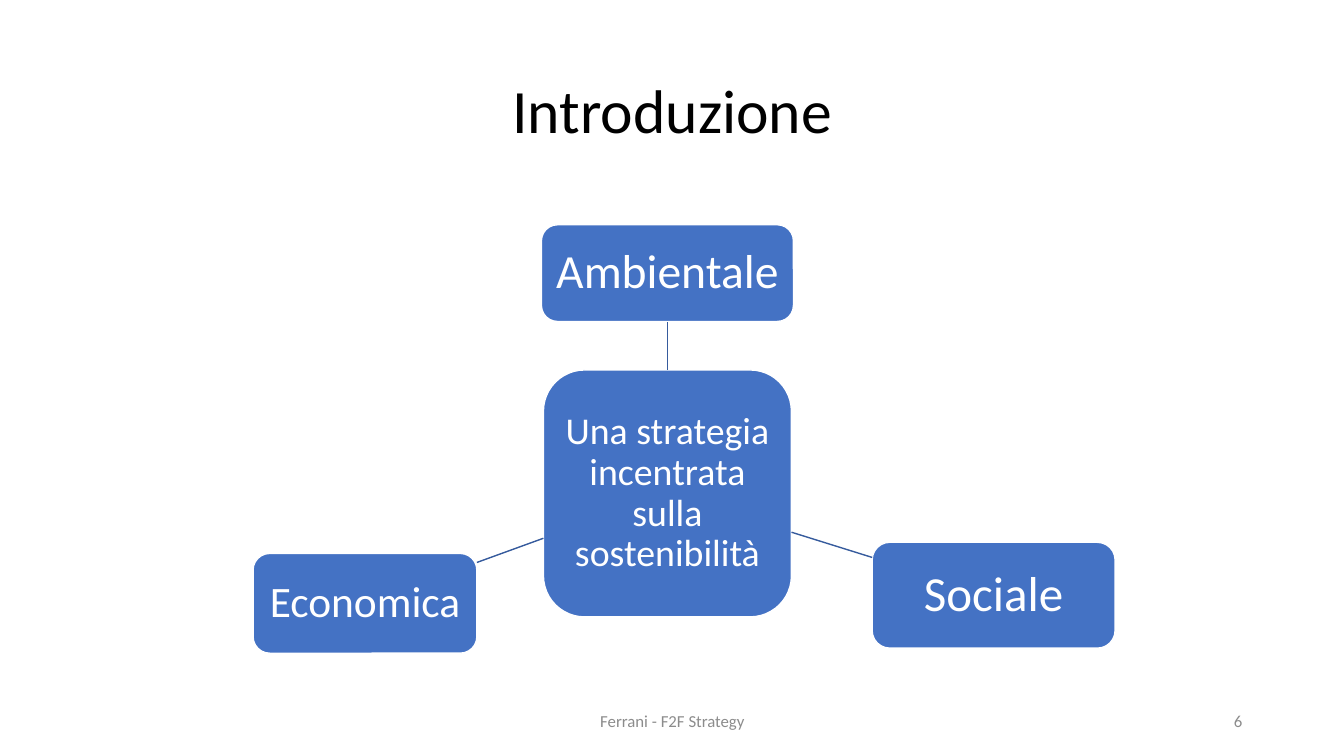
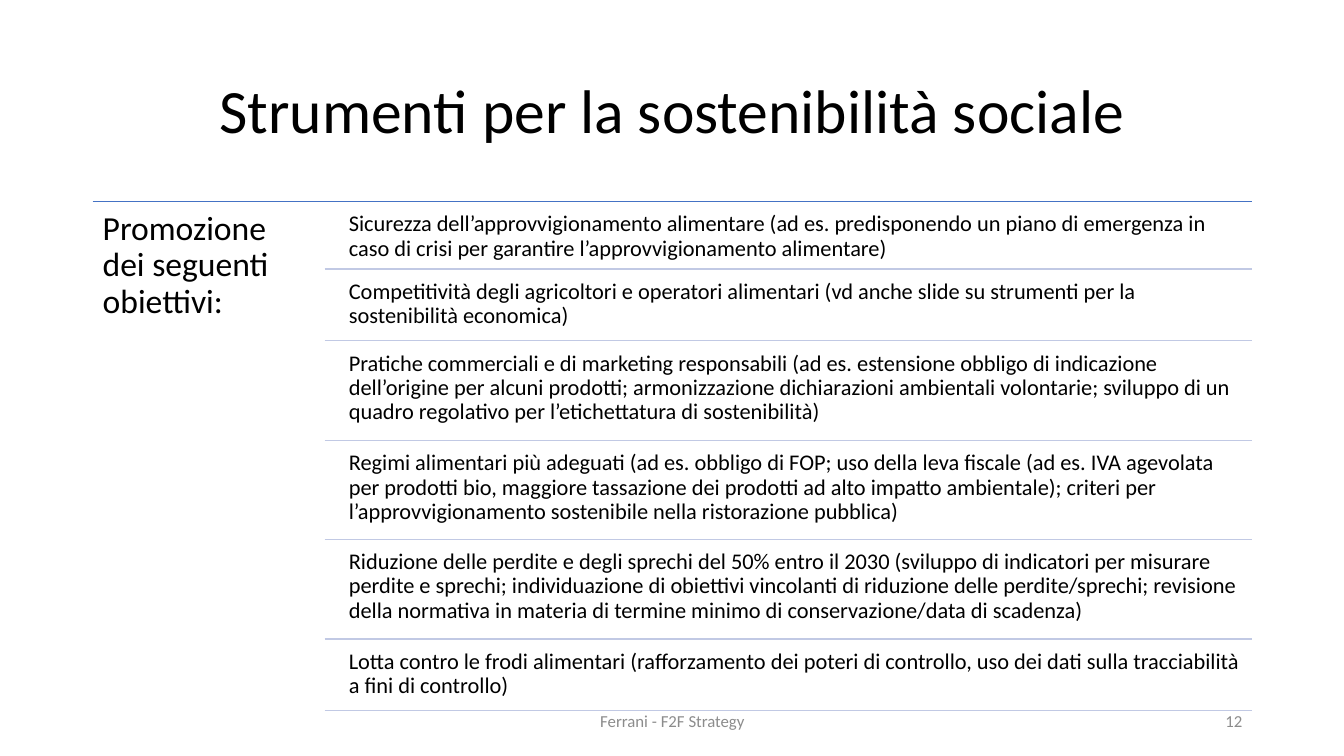
from dataclasses import dataclass

from lxml import etree
from pptx import Presentation
from pptx import util as u
from pptx.dml.color import RGBColor
from pptx.enum import shapes, text
from pptx.oxml.ns import qn

PX = 9144  # EMU; 100 px to the inch


@dataclass(frozen=True)
class Theme:
    font: str = "Calibri"
    ink: str = "000000"
    paper: str = "FFFFFF"
    accent: str = "4472C4"
    link: str = "365B9D"
    divider: str = "C1C9E4"
    muted: str = "8C8C8C"
    title_size: int = 44
    lead_size: int = 24
    row_size: int = 16
    footer_size: int = 12
    line_width: int = 1
    spacing: float = 0.9


THEME = Theme()
FOOTER = "Ferrani - F2F Strategy"
TITLE_BOX = (92, 40, 1150, 145)
FOOTER_BOX = (442, 695, 450, 40)
NUMBER_BOX = (942, 695, 300, 40)

HUB = ("Una strategia incentrata sulla sostenibilità", (539, 367, 246, 245), 27)
TOP_PILLAR = ("Ambientale", (537, 223, 250, 96), 34)
# label, box, type size, link start, link end
SIDE_PILLARS = [
    ("Sociale", (865, 538, 241, 105), 35, (785, 528), (865, 553)),
    ("Economica", (251, 549, 222, 99), 31, (539, 534), (473, 558)),
]

LEFT, RIGHT, LIST_TOP = 92, 1242, 200
DIVIDER_LEFT, ROW_LEFT, ROW_GAP = 322, 339, 4
GOALS = [
    (67, "Sicurezza dell’approvvigionamento alimentare (ad es. predisponendo un piano di "
         "emergenza in caso di crisi per garantire l’approvvigionamento alimentare)"),
    (71, "Competitività degli agricoltori e operatori alimentari (vd anche slide su "
         "strumenti per la sostenibilità economica)"),
    (99, "Pratiche commerciali e di marketing responsabili (ad es. estensione obbligo di "
         "indicazione dell’origine per alcuni prodotti; armonizzazione dichiarazioni "
         "ambientali volontarie; sviluppo di un quadro regolativo per l’etichettatura di "
         "sostenibilità)"),
    (98, "Regimi alimentari più adeguati (ad es. obbligo di FOP; uso della leva fiscale "
         "(ad es. IVA agevolata per prodotti bio, maggiore tassazione dei prodotti ad alto "
         "impatto ambientale); criteri per l’approvvigionamento sostenibile nella "
         "ristorazione pubblica)"),
    (99, "Riduzione delle perdite e degli sprechi del 50% entro il 2030 (sviluppo di "
         "indicatori per misurare perdite e sprechi; individuazione di obiettivi vincolanti "
         "di riduzione delle perdite/sprechi; revisione della normativa in materia di "
         "termine minimo di conservazione/data di scadenza)"),
    (71, "Lotta contro le frodi alimentari (rafforzamento dei poteri di controllo, uso dei "
         "dati sulla tracciabilità a fini di controllo)"),
]


def px(*lengths):
    return [u.Emu(length * PX) for length in lengths]


def apply(target, formats):
    for name, value in formats.items():
        setattr(target, name, value)


def write(shape, wording, size, color, align="LEFT", anchor="TOP", inset=None,
          spacing=THEME.spacing):
    frame = shape.text_frame
    frame.text = wording
    apply(frame, {"word_wrap": True,
                  "vertical_anchor": getattr(text.MSO_ANCHOR, anchor)})
    if inset is not None:
        sides = ("margin_left", "margin_top", "margin_right", "margin_bottom")
        apply(frame, dict.fromkeys(sides, u.Emu(inset * PX)))
    paragraph = frame.paragraphs[0]
    apply(paragraph, {"alignment": getattr(text.PP_ALIGN, align),
                      "line_spacing": spacing})
    font = paragraph.runs[0].font
    apply(font, {"name": THEME.font, "size": u.Pt(size)})
    font.color.rgb = RGBColor.from_string(color)


def add_text(slide, box, wording, size, color=THEME.ink, **formats):
    write(slide.shapes.add_textbox(*px(*box)), wording, size, color, **formats)


def set_line(line, color):
    line.color.rgb = RGBColor.from_string(color)
    line.width = u.Pt(THEME.line_width)


def add_line(slide, start, end, color):
    connector = slide.shapes.add_connector(
        shapes.MSO_CONNECTOR.STRAIGHT, *px(*start, *end))
    set_line(connector.line, color)
    etree.SubElement(connector._element.spPr, qn("a:effectLst"))
    return connector


def add_node(slide, label, box, size):
    node = slide.shapes.add_shape(shapes.MSO_SHAPE.ROUNDED_RECTANGLE, *px(*box))
    node.shadow.inherit = False
    node.fill.solid()
    node.fill.fore_color.rgb = RGBColor.from_string(THEME.accent)
    set_line(node.line, THEME.paper)
    write(node, label, size, THEME.paper, "CENTER", "MIDDLE", inset=7)
    return node


def add_slide(deck, title, number):
    """Add a slide with the shared title, footer and page number."""
    slide = deck.slides.add_slide(deck.slide_layouts[5])
    heading = slide.shapes.title
    apply(heading, dict(zip(("left", "top", "width", "height"), px(*TITLE_BOX))))
    write(heading, title, THEME.title_size, THEME.ink, "CENTER", "MIDDLE")
    for box, wording, align in ((FOOTER_BOX, FOOTER, "CENTER"),
                                (NUMBER_BOX, str(number), "RIGHT")):
        add_text(slide, box, wording, THEME.footer_size, THEME.muted,
                 align=align, anchor="MIDDLE", spacing=1.0)
    return slide


def add_pillars(slide):
    hub = add_node(slide, *HUB)
    top = add_node(slide, *TOP_PILLAR)
    link = add_line(slide, (662, 367), (662, 319), THEME.link)
    link.begin_connect(hub, 0)
    link.end_connect(top, 2)
    for label, box, size, start, end in SIDE_PILLARS:
        add_node(slide, label, box, size)
        add_line(slide, start, end, THEME.link)


def add_goals(slide):
    add_line(slide, (LEFT, LIST_TOP), (RIGHT, LIST_TOP), THEME.accent)
    add_text(slide, (LEFT, LIST_TOP, DIVIDER_LEFT - LEFT, 510),
             "Promozione dei seguenti obiettivi:", THEME.lead_size, inset=10)
    top = LIST_TOP
    for height, goal in GOALS:
        add_text(slide, (ROW_LEFT, top + ROW_GAP, RIGHT - ROW_LEFT, height - ROW_GAP),
                 goal, THEME.row_size, inset=7)
        top += height
        add_line(slide, (DIVIDER_LEFT, top), (RIGHT, top), THEME.divider)


def main():
    deck = Presentation()
    deck.slide_width, deck.slide_height = px(1333, 750)
    add_pillars(add_slide(deck, "Introduzione", 6))
    add_goals(add_slide(deck, "Strumenti per la sostenibilità sociale", 12))
    deck.save("out.pptx")


if __name__ == "__main__":
    main()
